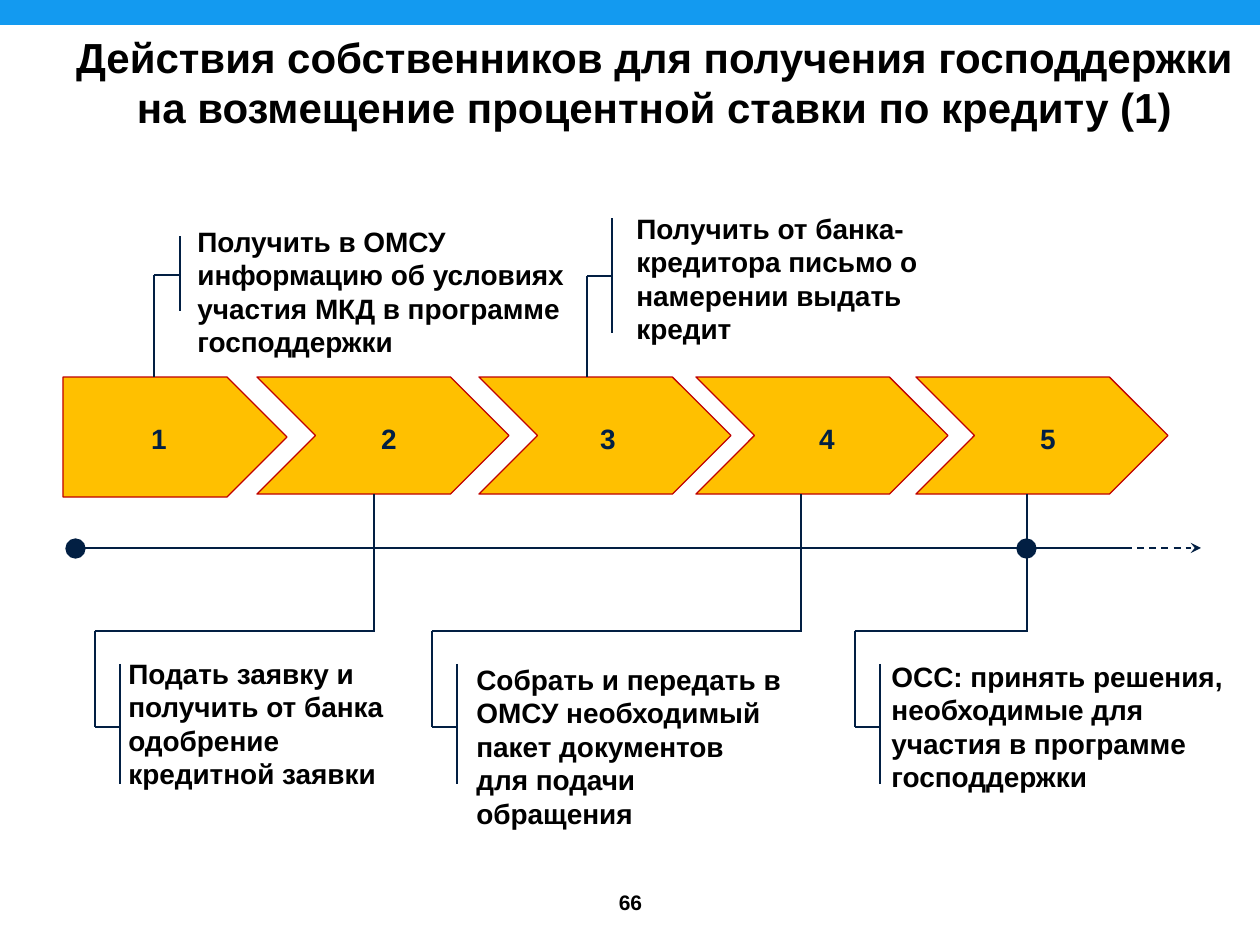
from dataclasses import dataclass

from lxml import etree
from pptx import Presentation
from pptx.dml.color import RGBColor
from pptx.enum.dml import MSO_LINE
from pptx.enum.shapes import MSO_CONNECTOR, MSO_SHAPE
from pptx.enum.text import MSO_ANCHOR, PP_ALIGN
from pptx.oxml.ns import qn
from pptx.util import Emu, Pt

RECT = MSO_SHAPE.RECTANGLE
OVAL = MSO_SHAPE.OVAL
PLATE = MSO_SHAPE.PENTAGON
CHEVRON = MSO_SHAPE.CHEVRON
STRAIGHT = MSO_CONNECTOR.STRAIGHT
DASH = MSO_LINE.DASH
LEFT, CENTER = PP_ALIGN.LEFT, PP_ALIGN.CENTER
TOP, MIDDLE = MSO_ANCHOR.TOP, MSO_ANCHOR.MIDDLE
SCALE = 914400 / 126


@dataclass(frozen=True)
class Theme:
    font: str = "Arial"
    bar: str = "139AF0"
    navy: str = "021F43"
    gold: str = "FFC000"
    red: str = "C00000"
    black: str = "000000"
    title: int = 24
    body: int = 16
    small: int = 12


def px(n):
    return Emu(round(n * SCALE))


def rgb(code):
    return RGBColor.from_string(code)


class Deck:
    def __init__(self, theme):
        self.theme = theme
        self.file = Presentation()
        self.file.slide_width = px(1260)
        self.file.slide_height = px(945)
        self.slide = self.file.slides.add_slide(self.file.slide_layouts[6])

    def shape(self, kind, box, fill, edge=None):
        item = self.slide.shapes.add_shape(kind, *map(px, box))
        item.shadow.inherit = False
        item.fill.solid()
        item.fill.fore_color.rgb = rgb(fill)
        if edge:
            item.line.color.rgb = rgb(edge)
            item.line.width = Pt(0.75)
        else:
            item.line.fill.background()

    def text(self, words, box, size, color, align=LEFT, anchor=TOP):
        frame = self.slide.shapes.add_textbox(*map(px, box)).text_frame
        frame.word_wrap = True
        frame.vertical_anchor = anchor
        frame.text = words
        para = frame.paragraphs[0]
        para.alignment = align
        for run in para.runs:
            run.font.name = self.theme.font
            run.font.size = Pt(size)
            run.font.bold = True
            run.font.color.rgb = rgb(color)

    def line(self, x1, y1, x2, y2, arrow=False):
        item = self.slide.shapes.add_connector(STRAIGHT, *map(px, (x1, y1, x2, y2)))
        item.line.color.rgb = rgb(self.theme.navy)
        item.line.width = Pt(1)
        etree.SubElement(item.element.spPr, qn("a:effectLst"))
        if arrow:
            item.line.dash_style = DASH
            tail = etree.SubElement(item.line._get_or_add_ln(), qn("a:tailEnd"))
            tail.set("type", "stealth")

    def path_up(self, foot, bar, top, base, mid):
        self.line(foot, 377, foot, mid)
        self.line(foot, mid, bar, mid)
        self.line(bar, base, bar, top)

    def path_down(self, drop, left):
        bar = left + 25
        self.line(drop, 494, drop, 632)
        self.line(left, 631, drop, 631)
        self.line(left, 631, left, 727)
        self.line(left, 727, bar, 727)
        self.line(bar, 664, bar, 784)

    def step(self, num, left, mark):
        kind, wide, high = (PLATE, 224, 120) if num == 1 else (CHEVRON, 252, 117)
        look = self.theme
        self.shape(kind, (left, 377, wide, high), look.gold, look.red)
        self.text(str(num), (mark, 415, 64, 46), look.body, look.navy, CENTER)

    def dot(self, left):
        self.shape(OVAL, (left, 539, 19, 19), self.theme.navy, self.theme.navy)

    def save(self):
        self.file.save("out.pptx")


STEPS = [(63, 127), (257, 357), (479, 576), (696, 795), (916, 1016)]
UPPER = [(154, 180, 236, 311, 275), (587, 612, 218, 333, 276)]
LOWER = [(374, 95), (801, 432), (1027, 855)]
NOTES = [
    ("Получить в ОМСУ информацию об условиях участия МКД в программе господдержки",
     (185, 218, 412, 149)),
    ("Подать заявку и получить от банка одобрение кредитной заявки",
     (116, 650, 304, 149)),
    ("Получить от банка-кредитора письмо о намерении выдать кредит",
     (624, 205, 392, 149)),
    ("Собрать и передать в ОМСУ необходимый пакет документов\vдля подачи обращения",
     (464, 656, 339, 183)),
    ("ОСС: принять решения, необходимые для участия в программе господдержки",
     (879, 653, 362, 149)),
]


def main():
    look = Theme()
    deck = Deck(look)
    deck.shape(RECT, (0, 0, 1260, 25), look.bar)
    deck.text("Действия собственников для получения господдержки "
              "на возмещение процентной ставки по кредиту (1)",
              (37, 25, 1235, 115), look.title, look.black, CENTER)
    deck.text("66", (575, 878, 111, 49), look.small, look.black, CENTER, MIDDLE)
    for num, (left, mark) in enumerate(STEPS, 1):
        deck.step(num, left, mark)
    for spot in UPPER:
        deck.path_up(*spot)
    for spot in LOWER:
        deck.path_down(*spot)
    deck.line(79, 548, 1125, 548)
    deck.line(1125, 548, 1201, 548, arrow=True)
    for left in (66, 1017):
        deck.dot(left)
    for words, box in NOTES:
        deck.text(words, box, look.body, look.black)
    deck.save()


if __name__ == "__main__":
    main()
